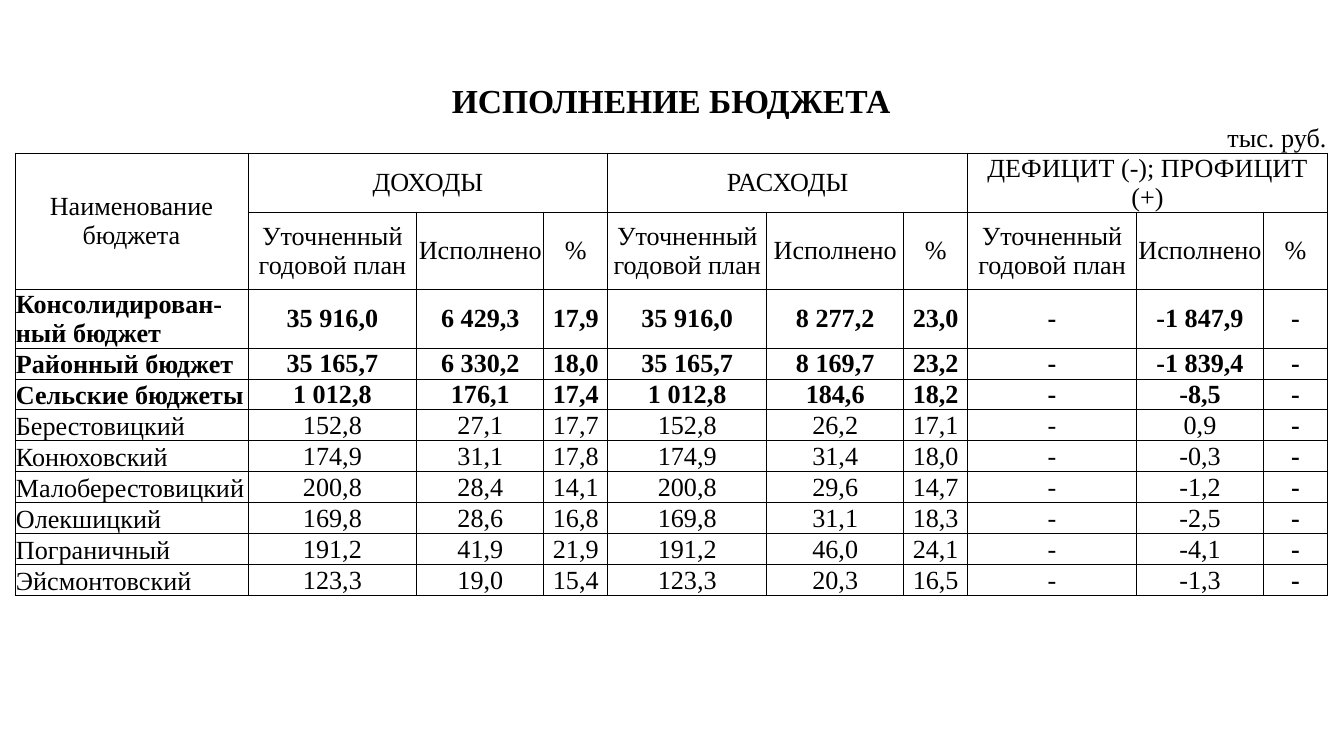
from lxml import etree
from pptx import Presentation, util as u
from pptx.dml.color import RGBColor
from pptx.enum import text
from pptx.oxml.ns import qn

PX = 914400 / 134.4
FONT = "Times New Roman"
BLACK = "000000"
CENTER, LEFT, RIGHT = text.PP_ALIGN.CENTER, text.PP_ALIGN.LEFT, text.PP_ALIGN.RIGHT
MIDDLE, BOTTOM = text.MSO_ANCHOR.MIDDLE, text.MSO_ANCHOR.BOTTOM


def px(length):
    return u.Emu(round(length * PX))


def write(row, col, words, across=1, down=1, size=14, bold=False,
          align=CENTER, anchor=MIDDLE, color=BLACK):
    cell = table.cell(row, col)
    if across * down > 1:
        cell.merge(table.cell(row + down - 1, col + across - 1))
    cell.vertical_anchor = anchor
    for i, line in enumerate(words.split("\n")):
        frame = cell.text_frame
        para = frame.add_paragraph() if i else frame.paragraphs[0]
        para.alignment = align
        span = para.add_run()
        span.text = line
        span.font.name = FONT
        span.font.size = u.Pt(size)
        span.font.bold = bold
        span.font.color.rgb = RGBColor.from_string(color)


deck = Presentation()
deck.slide_width, deck.slide_height = px(1344), px(756)
page = deck.slides.add_slide(deck.slide_layouts[6])

# Table grid
widths = [233, 136, 33, 87, 40, 64, 159, 28, 109, 13, 51, 169, 70, 57, 64]
heights = [38, 30, 59, 77, 59] + [31] * 8
table = page.shapes.add_table(len(heights), len(widths), px(15), px(82),
                              px(sum(widths)), px(sum(heights))).table
table.first_row = table.horz_banding = False
for column, width in zip(table.columns, widths):
    column.width = px(width)
for line, height in zip(table.rows, heights):
    line.height = px(height)

# Cell margins, borders and fill
for r in range(len(heights)):
    sides = [] if r == 0 else ["B"] if r == 1 else ["L", "R", "T", "B"]
    for c in range(len(widths)):
        cell = table.cell(r, c)
        cell.margin_left = cell.margin_right = cell.margin_top = px(1)
        cell.margin_bottom = px(1 if r > 3 and c else 0)
        for side in sides:
            border = etree.SubElement(cell._tc.get_or_add_tcPr(), qn("a:ln" + side), w="6350")
            solid = etree.SubElement(border, qn("a:solidFill"))
            etree.SubElement(solid, qn("a:srgbClr"), val=BLACK)
        cell.fill.background()
        para = cell.text_frame.paragraphs[0]
        etree.SubElement(para._p, qn("a:endParaRPr"), sz="1400")

# Title and unit
write(0, 0, "ИСПОЛНЕНИЕ БЮДЖЕТА", across=15, size=18, bold=True)
for col in (2, 4, 6, 8, 11):
    table.cell(1, col).merge(table.cell(1, col + 1))
write(1, 13, "тыс. руб.", across=2, align=RIGHT, anchor=BOTTOM)

# Column headings
write(2, 0, "Наименование\nбюджета", down=2)
write(2, 1, "ДОХОДЫ", across=5)
write(2, 6, "РАСХОДЫ", across=5)
write(2, 11, "ДЕФИЦИТ (-); ПРОФИЦИТ (+)", across=4)
value_columns = [(1, 2), (3, 2), (5, 1), (6, 1), (7, 2), (9, 2), (11, 1), (12, 2), (14, 1)]
headings = ["Уточненный годовой план", "Исполнено", "%"] * 3
for (col, across), heading in zip(value_columns, headings):
    write(3, col, heading, across=across)

# Budgets: name, plan, income, income %, expense, expense %, balance
budgets = [
    ("Консолидирован-ный бюджет", "35 916,0", "6 429,3", "17,9", "8 277,2", "23,0", "-1 847,9"),
    ("Районный бюджет", "35 165,7", "6 330,2", "18,0", "8 169,7", "23,2", "-1 839,4"),
    ("Сельские бюджеты", "1 012,8", "176,1", "17,4", "184,6", "18,2", "-8,5"),
    ("Берестовицкий", "152,8", "27,1", "17,7", "26,2", "17,1", "0,9"),
    ("Конюховский", "174,9", "31,1", "17,8", "31,4", "18,0", "-0,3"),
    ("Малоберестовицкий", "200,8", "28,4", "14,1", "29,6", "14,7", "-1,2"),
    ("Олекшицкий", "169,8", "28,6", "16,8", "31,1", "18,3", "-2,5"),
    ("Пограничный", "191,2", "41,9", "21,9", "46,0", "24,1", "-4,1"),
    ("Эйсмонтовский", "123,3", "19,0", "15,4", "20,3", "16,5", "-1,3"),
]
for r, (name, plan, income, income_share, expense, expense_share, balance) in enumerate(budgets, 4):
    total = r < 7
    write(r, 0, name, bold=total, align=LEFT, anchor=BOTTOM)
    values = [plan, income, income_share, plan, expense, expense_share, "-", balance, "-"]
    for (col, across), value in zip(value_columns, values):
        write(r, col, value, across=across, bold=total or col == 14)

deck.save("out.pptx")
